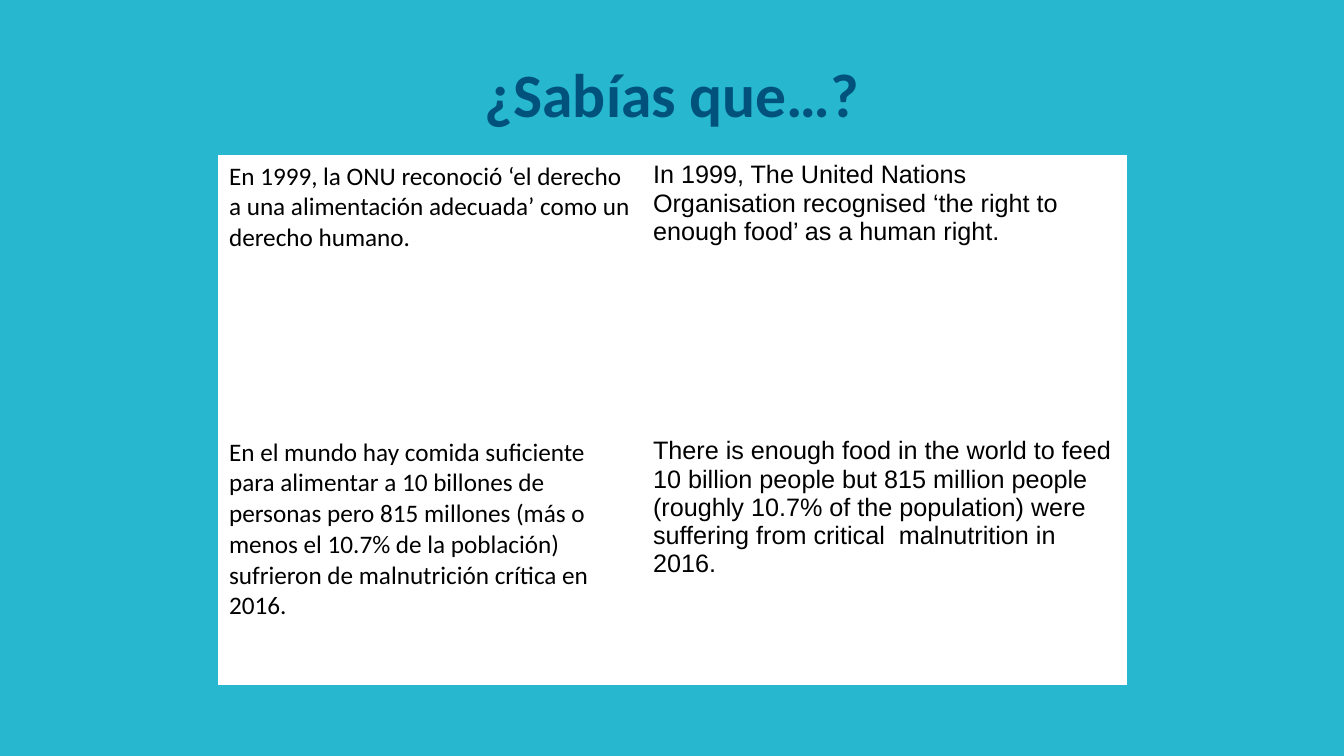
from pptx import Presentation
from pptx.dml.color import RGBColor
from pptx.enum.text import MSO_ANCHOR, PP_ALIGN
from pptx.util import Emu, Pt

MIDDLE = MSO_ANCHOR.MIDDLE
CENTER = PP_ALIGN.CENTER
SCALE = 12192000 / 1344

COLORS = {"back": "27B8CF", "title": "00527D", "text": "000000", "cell": "FFFFFF"}
TITLE = {"name": "Calibri", "size": Pt(44), "bold": True}
SPANISH = {"name": "Calibri", "size": Pt(18), "bold": False}
ENGLISH = {"name": "Arial", "size": Pt(18), "bold": False}

FACTS = [
    ("En 1999, la ONU reconoció ‘el derecho a una alimentación adecuada’ "
     "como un derecho humano.",
     "In 1999, The United Nations Organisation recognised ‘the right to "
     "enough food’ as a human right."),
    ("En el mundo hay comida suficiente para alimentar a 10 billones de "
     "personas pero 815 millones (más o menos el 10.7% de la población) "
     "sufrieron de malnutrición crítica en 2016.",
     "There is enough food in the world to feed 10 billion people but 815 "
     "million people (roughly 10.7% of the population) were suffering from "
     "critical  malnutrition in 2016."),
]


def px(count):
    return Emu(round(count * SCALE))


def color(name):
    return RGBColor.from_string(COLORS[name])


class Page:
    def __init__(self, deck):
        self.slide = deck.slides.add_slide(deck.slide_layouts[6])
        self.paint(self.slide.background.fill, "back")

    def paint(self, fill, name):
        fill.solid()
        fill.fore_color.rgb = color(name)

    def label(self, frame, text, style, tint):
        run = frame.paragraphs[0].add_run()
        run.text = text
        for key, value in style.items():
            setattr(run.font, key, value)
        run.font.color.rgb = color(tint)

    def title(self, text, box):
        frame = self.slide.shapes.add_textbox(*map(px, box)).text_frame
        frame.word_wrap = True
        frame.vertical_anchor = MIDDLE
        frame.paragraphs[0].alignment = CENTER
        self.label(frame, text, TITLE, "title")

    def table(self, facts, left, top, widths, heights, styles):
        box = left, top, sum(widths), sum(heights)
        grid = self.slide.shapes.add_table(
            len(heights), len(widths), *map(px, box)).table
        grid.first_row = grid.horz_banding = False
        for column, width in zip(grid.columns, widths):
            column.width = px(width)
        for row, height, texts in zip(grid.rows, heights, facts):
            row.height = px(height)
            for cell, text, style in zip(row.cells, texts, styles):
                self.paint(cell.fill, "cell")
                self.label(cell.text_frame, text, style, "text")


def main():
    deck = Presentation()
    deck.slide_width, deck.slide_height = px(1344), px(756)
    page = Page(deck)

    # Heading
    page.title("¿Sabías que…?", (219, 30, 907, 126))

    # Facts in Spanish and English
    page.table(FACTS, 219, 156, (424, 483), (276, 252), (SPANISH, ENGLISH))

    deck.save("out.pptx")


if __name__ == "__main__":
    main()
